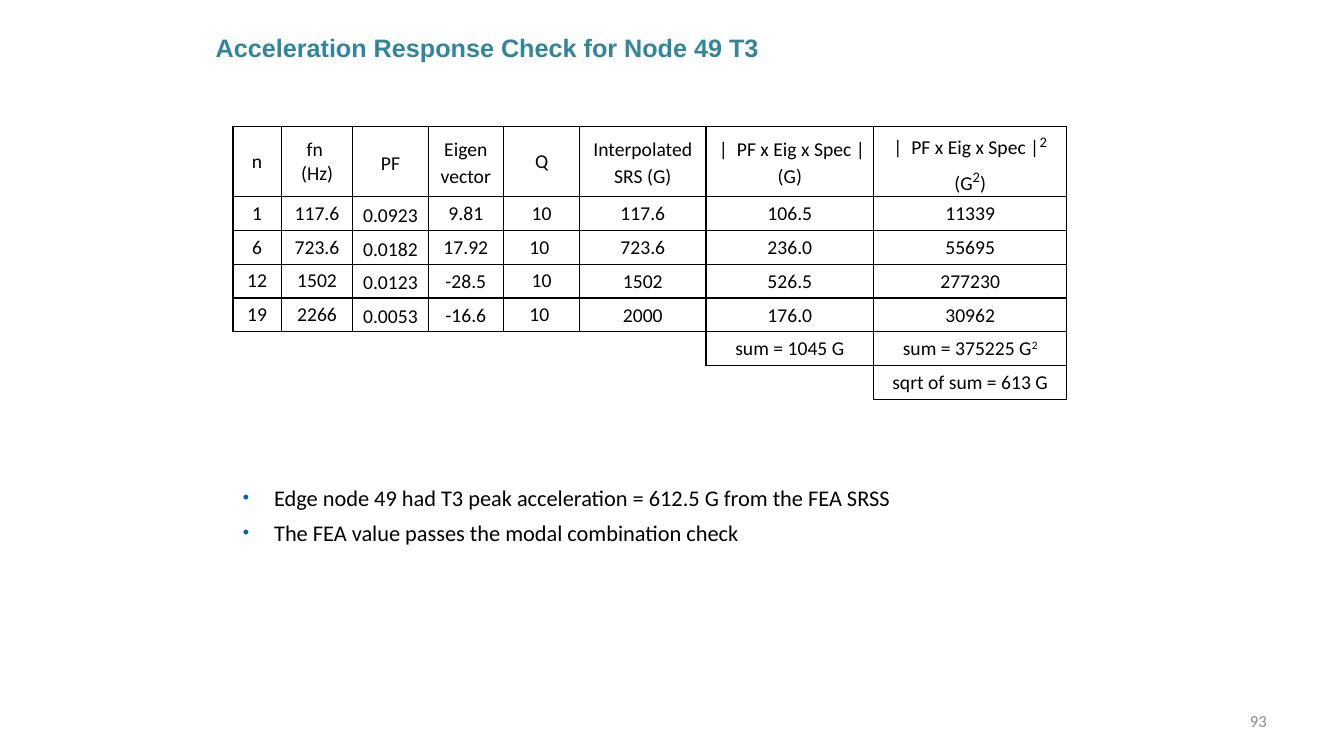
from lxml.etree import SubElement
from pptx import Presentation
from pptx.dml.color import RGBColor
from pptx.enum.text import MSO_ANCHOR, MSO_AUTO_SIZE, PP_ALIGN
from pptx.oxml.ns import qn
from pptx.util import Cm, Pt

COLORS = {"title": "31859C", "text": "000000", "bullet": "006699", "number": "8C8C8C"}
COLUMN_WIDTHS = [1.22, 1.8, 1.9, 1.9, 1.92, 3.18, 4.23, 4.86]
FIRST_COLUMNS = [0, 0, 0, 0, 0, 6, 7]
ROWS = [
    ["n", "fn \n(Hz)", "PF", "Eigen\nvector", "Q", "Interpolated SRS (G)",
     " |  PF x Eig x Spec |\n(G)", "|  PF x Eig x Spec |^2^\n(G^2^)"],
    ["1", "117.6", "0.0923", "9.81", "10", "117.6", "106.5", "11339"],
    ["6", "723.6", "0.0182", "17.92", "10 ", "723.6", "236.0", "55695"],
    ["12", "1502", "0.0123", "-28.5", "10", "1502", "526.5", "277230"],
    ["19", "2266", "0.0053", "-16.6", "10 ", "2000", "176.0", "30962"],
    ["sum = 1045 G", "sum = 375225 G^2^"],
    ["sqrt of sum = 613 G"],
]
BULLETS = [
    "Edge node 49 had T3 peak acceleration = 612.5 G from the FEA SRSS",
    "The FEA value passes the modal combination check",
]


def set_font(paragraph, name, size, color, bold=False):
    font = paragraph.font
    font.name, font.size, font.bold = name, Pt(size), bold
    font.color.rgb = RGBColor.from_string(COLORS[color])


def is_filled(row, column):
    return 0 <= row < len(ROWS) and FIRST_COLUMNS[row] <= column < len(COLUMN_WIDTHS)


presentation = Presentation()
presentation.slide_width, presentation.slide_height = Cm(33.87), Cm(19.05)
slide = presentation.slides.add_slide(presentation.slide_layouts[5])

title = slide.shapes.title
title.left, title.top, title.width, title.height = Cm(5.18), Cm(0.69), Cm(21.69), Cm(1.02)
title.text_frame.text = "Acceleration Response Check for Node 49 T3"
title.text_frame.vertical_anchor = MSO_ANCHOR.TOP
title.text_frame.auto_size = MSO_AUTO_SIZE.NONE
paragraph = title.text_frame.paragraphs[0]
paragraph.alignment = PP_ALIGN.LEFT
paragraph.space_before = paragraph.space_after = Pt(2)
set_font(paragraph, "Arial", 18, "title", True)

table = slide.shapes.add_table(
    len(ROWS), len(COLUMN_WIDTHS), Cm(5.87), Cm(3.18), Cm(21.01), Cm(6.88)
).table
table.first_row = table.horz_banding = False
for column, width in zip(table.columns, COLUMN_WIDTHS):
    column.width = Cm(width)
for row_index, texts in enumerate(ROWS):
    table.rows[row_index].height = Cm(0.85 if row_index else 1.78)
    first_column = FIRST_COLUMNS[row_index]
    for column_index in range(len(COLUMN_WIDTHS)):
        cell = table.cell(row_index, column_index)
        cell.vertical_anchor = MSO_ANCHOR.MIDDLE
        is_narrow = row_index > 0 and column_index in (3, 5, 6, 7)
        cell.margin_left = cell.margin_right = Cm(0.02 if is_narrow else 0.18)
        cell.margin_top, cell.margin_bottom = Cm(0.02 if is_narrow else 0), 0

        sides = {"L": (0, -1), "R": (0, 1), "T": (-1, 0), "B": (1, 0)}
        for side, (down, across) in sides.items():
            border = SubElement(cell._tc.get_or_add_tcPr(), qn(f"a:ln{side}"), w=str(Pt(1)))
            if is_filled(row_index, column_index) or is_filled(row_index + down, column_index + across):
                fill = SubElement(border, qn("a:solidFill"))
                SubElement(fill, qn("a:srgbClr"), val=COLORS["text"])
            else:
                SubElement(border, qn("a:noFill"))
        cell.fill.background()

        if not is_filled(row_index, column_index):
            continue
        for line_index, line in enumerate(texts[column_index - first_column].split("\n")):
            frame = cell.text_frame
            paragraph = frame.add_paragraph() if line_index else frame.paragraphs[0]
            paragraph.alignment = PP_ALIGN.CENTER
            if column_index == 2 or row_index == 0 and column_index in (3, 5, 6, 7):
                paragraph.line_spacing = 1.15
            set_font(paragraph, "Calibri", 14, "text")
            for part_index, part in enumerate(line.split("^")):
                if not part:
                    continue
                run = paragraph.add_run()
                run.text = part
                if part_index % 2:
                    run.font.size = Pt(14 if row_index else 18)
                    run.font._element.set("baseline", "30000")

notes_box = slide.shapes.add_textbox(Cm(5.87), Cm(12.07), Cm(22.07), Cm(1.83))
notes_box.text_frame.word_wrap = True
notes_box.text_frame.text = "\n".join(BULLETS)
for paragraph in notes_box.text_frame.paragraphs:
    properties = paragraph._p.get_or_add_pPr()
    properties.set("marL", str(Cm(0.79)))
    properties.set("indent", str(Cm(-0.79)))
    bullet_color = SubElement(properties, qn("a:buClr"))
    SubElement(bullet_color, qn("a:srgbClr"), val=COLORS["bullet"])
    SubElement(properties, qn("a:buSzPct"), val="80000")
    SubElement(properties, qn("a:buFont"), typeface="Arial")
    SubElement(properties, qn("a:buChar"), char="•")
    paragraph.space_before = Pt(6)
    set_font(paragraph, "Calibri", 16, "text")

number_box = slide.shapes.add_textbox(Cm(24.28), Cm(17.65), Cm(7.9), Cm(1.02))
number_box.text_frame.text = "93"
number_box.text_frame.word_wrap = True
number_box.text_frame.vertical_anchor = MSO_ANCHOR.MIDDLE
paragraph = number_box.text_frame.paragraphs[0]
paragraph.alignment = PP_ALIGN.RIGHT
set_font(paragraph, "Calibri", 12, "number")

presentation.save("out.pptx")
